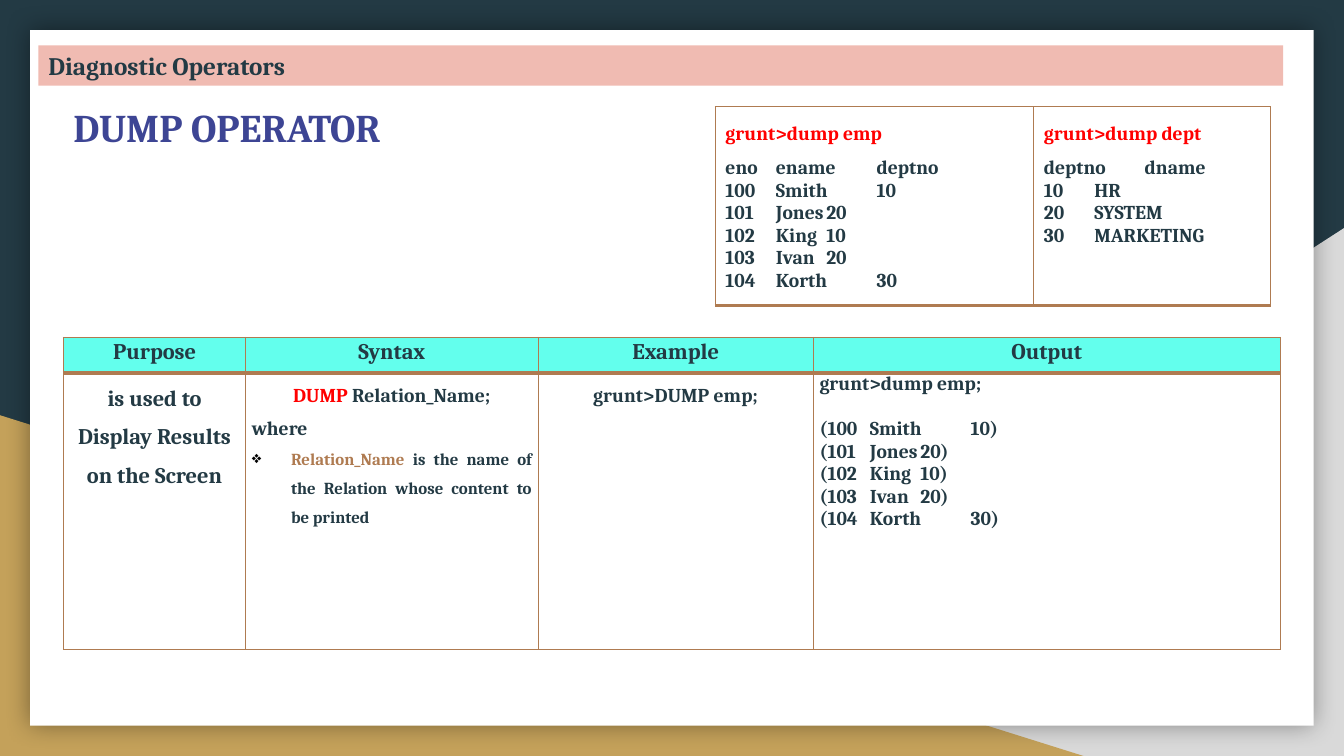
from dataclasses import dataclass

from lxml import etree
from pptx import Presentation
from pptx.dml.color import RGBColor
from pptx.enum.shapes import MSO_SHAPE
from pptx.enum.text import MSO_ANCHOR, MSO_AUTO_SIZE, PP_ALIGN
from pptx.oxml.ns import qn
from pptx.util import Pt

RECTANGLE, TRIANGLE = MSO_SHAPE.RECTANGLE, MSO_SHAPE.RIGHT_TRIANGLE
LEFT, CENTER, JUSTIFY = PP_ALIGN.LEFT, PP_ALIGN.CENTER, PP_ALIGN.JUSTIFY
TOP, MIDDLE = MSO_ANCHOR.TOP, MSO_ANCHOR.MIDDLE
TITLE_ONLY = 5


@dataclass(frozen=True)
class Theme:
    font: str = "Cambria"
    ink: str = "233A44"
    gold: str = "C4A15A"
    gray: str = "D9D9D9"
    white: str = "FFFFFF"
    bar: str = "F0BBB2"
    header: str = "63FFED"
    border: str = "AF7B51"
    command: str = "FF0000"
    title: str = "3D4594"
    title_size: int = 28
    bar_size: int = 18
    large: int = 16
    body: int = 14
    small: int = 12
    thin: float = 1
    thick: float = 3


THEME = Theme()


@dataclass
class Line:
    """One paragraph; lead is an opening run in its own colour."""
    text: str
    size: float = THEME.body
    color: str = THEME.ink
    align: PP_ALIGN = LEFT
    spacing: float = 1.0
    after: float = 0
    lead: str = ""
    lead_color: str = THEME.ink
    bullet: str = ""


def rgb(value):
    return RGBColor.from_string(value)


def write(text_frame, lines):
    for index, line in enumerate(lines):
        paragraph = text_frame.paragraphs[0] if index == 0 else text_frame.add_paragraph()
        paragraph.alignment = line.align
        paragraph.line_spacing = line.spacing
        paragraph.space_after = Pt(line.after)
        if line.bullet:
            properties = paragraph._p.get_or_add_pPr()
            properties.set("marL", str(Pt(28)))
            properties.set("indent", str(-Pt(28)))
            color = etree.SubElement(etree.SubElement(properties, qn("a:buClr")), qn("a:srgbClr"))
            color.set("val", "000000")
            etree.SubElement(properties, qn("a:buChar")).set("char", line.bullet)
        font = paragraph.font
        font.name, font.size, font.bold = THEME.font, Pt(line.size), True
        font.color.rgb = rgb(line.color)
        if line.lead:
            lead = paragraph.add_run()
            lead.text = line.lead
            lead.font.color.rgb = rgb(line.lead_color)
        paragraph.add_run().text = line.text


def add_block(slide, kind, box, color):
    shape = slide.shapes.add_shape(kind, *map(Pt, box))
    shape.shadow.inherit = False
    shape.fill.solid()
    shape.fill.fore_color.rgb = rgb(color)
    shape.line.fill.background()
    return shape


def format_cell(cell, lines, color, top, bottom):
    """Fill a cell, with thin side borders and the given top and bottom widths."""
    properties = cell._tc.get_or_add_tcPr()
    widths = {"lnL": THEME.thin, "lnR": THEME.thin, "lnT": top, "lnB": bottom}
    for side, width in widths.items():
        border = etree.SubElement(properties, qn(f"a:{side}"), w=str(Pt(width)))
        fill = etree.SubElement(border, qn("a:solidFill"))
        etree.SubElement(fill, qn("a:srgbClr"), val=THEME.border)
    cell.fill.solid()
    cell.fill.fore_color.rgb = rgb(color)
    write(cell.text_frame, lines)


def add_plain_table(slide, left, top, widths, heights):
    frame = slide.shapes.add_table(len(heights), len(widths), Pt(left), Pt(top),
                                   Pt(sum(widths)), Pt(sum(heights)))
    table = frame.table
    table.first_row = table.horz_banding = False
    for column, width in zip(table.columns, widths):
        column.width = Pt(width)
    for row, height in zip(table.rows, heights):
        row.height = Pt(height)
    return table


def draw_backdrop(slide, width, height):
    slide.background.fill.solid()
    slide.background.fill.fore_color.rgb = rgb(THEME.ink)
    # Corner triangles
    right = add_block(slide, TRIANGLE, (width - 584, height - 377, 584, 377), THEME.gray)
    right._element.spPr.find(qn("a:xfrm")).set("flipH", "1")
    add_block(slide, TRIANGLE, (0, height - 243.4, 774, 243.4), THEME.gold)
    # White panel with a soft shadow
    margin = 21.6
    panel = add_block(slide, RECTANGLE, (margin, margin, width - 2 * margin, height - 2 * margin),
                      THEME.white)
    effects = panel._element.spPr.find(qn("a:effectLst"))
    shadow = etree.SubElement(effects, qn("a:outerShdw"), blurRad=str(Pt(18)), dist="0")
    color = etree.SubElement(shadow, qn("a:srgbClr"), val="000000")
    etree.SubElement(color, qn("a:alpha"), val="40000")


def draw_section_bar(slide, box):
    bar = add_block(slide, RECTANGLE, box, THEME.bar)
    bar.text_frame.vertical_anchor = MIDDLE
    write(bar.text_frame, [Line("Diagnostic Operators", THEME.bar_size)])


def draw_title(slide, box):
    title = slide.shapes.title
    title.left, title.top, title.width, title.height = map(Pt, box)
    frame = title.text_frame
    frame.word_wrap = False
    frame.auto_size = MSO_AUTO_SIZE.NONE
    frame.vertical_anchor = TOP
    write(frame, [Line("DUMP OPERATOR", THEME.title_size, THEME.title, CENTER)])
    # Bring the title in front of the panel
    title._element.getparent().append(title._element)


def draw_relations(slide, left, top):
    relations = [
        ("emp", ["eno\tename\tdeptno", "100\tSmith\t10", "101\tJones\t20", "102\tKing\t10",
                 "103\tIvan\t20", "104\tKorth\t30"]),
        ("dept", ["deptno\tdname", "10\tHR", "20\tSYSTEM", "30\tMARKETING"]),
    ]
    table = add_plain_table(slide, left, top, [227.5, 169], [142])
    for cell, (name, (heading, *records)) in zip(table.rows[0].cells, relations):
        lines = [Line(f"grunt>dump {name}", color=THEME.command, spacing=1.5),
                 Line(heading, spacing=1.5), *map(Line, records)]
        format_cell(cell, lines, THEME.white, THEME.thin, THEME.thick)


def draw_operator_table(slide, left, top):
    columns = {
        "Purpose": [Line("is used to Display Results on the Screen", THEME.large,
                         align=CENTER, spacing=1.5)],
        "Syntax": [
            Line("Relation_Name;", align=CENTER, spacing=1.5,
                 lead="DUMP ", lead_color=THEME.command),
            Line("where", spacing=1.5),
            Line("is the name of the Relation whose content to be printed", THEME.small,
                 align=JUSTIFY, spacing=1.5, lead="Relation_Name ",
                 lead_color=THEME.border, bullet="❖"),
        ],
        "Example": [Line("grunt>DUMP emp;", align=CENTER, spacing=1.5)],
        "Output": [
            Line("grunt>dump emp;", after=16),
            *map(Line, ["(100\tSmith\t10)", "(101\tJones\t20)", "(102\tKing\t10)",
                        "(103\tIvan\t20)", "(104\tKorth\t30)"]),
        ],
    }
    table = add_plain_table(slide, left, top, [130, 209, 196.5, 333.5], [25.5, 197.5])
    for index, (heading, lines) in enumerate(columns.items()):
        header, body = table.cell(0, index), table.cell(1, index)
        for cell in (header, body):
            cell.margin_left = cell.margin_right = Pt(4.5)
            cell.margin_top = cell.margin_bottom = Pt(0)
        format_cell(header, [Line(heading, THEME.large, align=CENTER, spacing=1.07)],
                    THEME.header, THEME.thin, THEME.thick)
        format_cell(body, lines, THEME.white, THEME.thick, THEME.thin)


def main():
    presentation = Presentation()
    width, height = 960, 540
    presentation.slide_width, presentation.slide_height = Pt(width), Pt(height)
    slide = presentation.slides.add_slide(presentation.slide_layouts[TITLE_ONLY])
    draw_backdrop(slide, width, height)
    draw_section_bar(slide, (27.5, 32.4, 889, 28.8))
    draw_title(slide, (39.6, 70, 245, 41))
    draw_relations(slide, 511, 76.3)
    draw_operator_table(slide, 45.4, 241)
    presentation.save("out.pptx")


if __name__ == "__main__":
    main()
